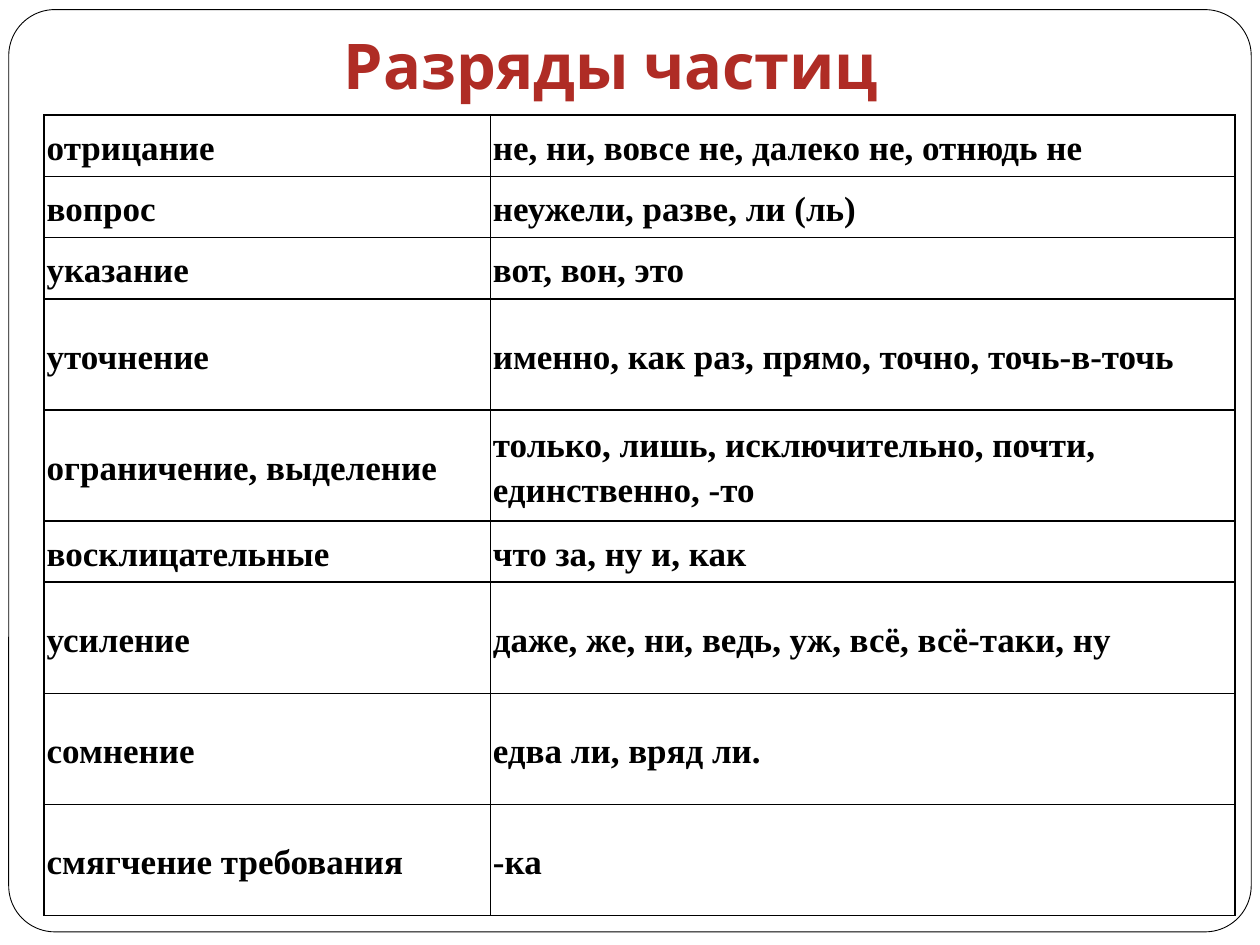
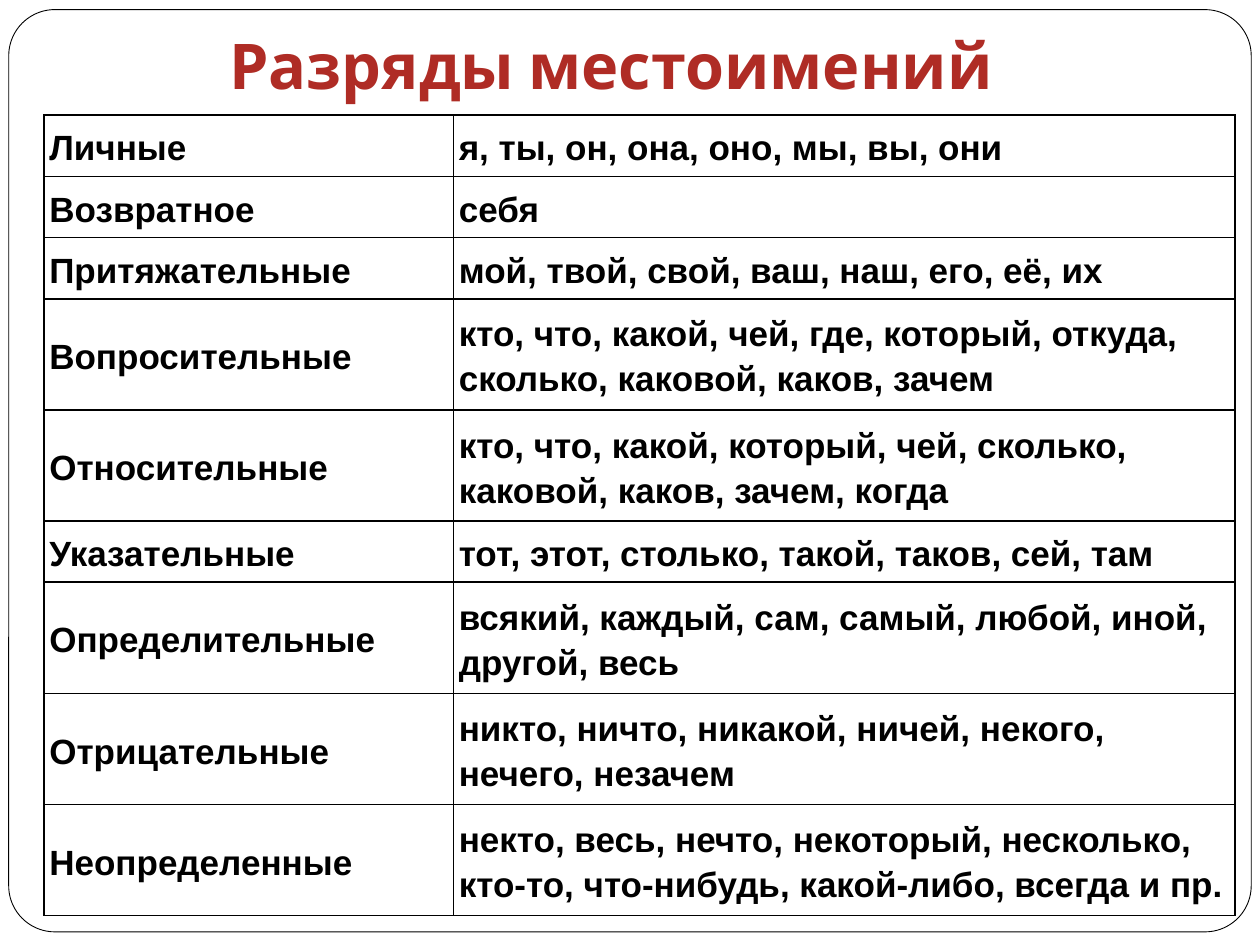
from dataclasses import dataclass

import pptx
import pptx.dml.color
import pptx.enum.shapes
import pptx.enum.text
import pptx.oxml
import pptx.oxml.ns
import pptx.slide
import pptx.table
import pptx.text.text
import pptx.util

Pt = pptx.util.Pt
RGBColor = pptx.dml.color.RGBColor
PP_ALIGN = pptx.enum.text.PP_ALIGN
MSO_ANCHOR = pptx.enum.text.MSO_ANCHOR

BLACK = RGBColor(0x00, 0x00, 0x00)
WHITE = RGBColor(0xFF, 0xFF, 0xFF)
TITLE_RED = RGBColor(0xAF, 0x2C, 0x25)

SHORT_ROW = Pt(35)
TALL_ROW = Pt(63.5)
ROW_HEIGHTS = [SHORT_ROW] * 3 + [TALL_ROW] * 2 + [SHORT_ROW] + [TALL_ROW] * 3
TABLE_LEFT, TABLE_TOP, TABLE_WIDTH = Pt(25.2), Pt(65.8), Pt(680.6)


@dataclass(frozen=True)
class WordClassTable:
    """One slide: its title, the table's look, and (category, examples) rows."""
    title: str
    font: str
    category_width: pptx.util.Length
    inset: pptx.util.Length
    indent: pptx.util.Length
    rows: list[tuple[str, str]]


PARTICLES = WordClassTable(
    "Разряды частиц", "Times New Roman", Pt(255), Pt(0.75), Pt(0.75),
    [
        ("отрицание", "не, ни, вовсе не, далеко не, отнюдь не"),
        ("вопрос", "неужели, разве, ли (ль)"),
        ("указание", "вот, вон, это"),
        ("уточнение", "именно, как раз, прямо, точно, точь-в-точь"),
        ("ограничение, выделение",
         "только, лишь, исключительно, почти, единственно, -то"),
        ("восклицательные", "что за, ну и, как"),
        ("усиление", "даже, же, ни, ведь, уж, всё, всё-таки, ну"),
        ("сомнение", "едва ли, вряд ли."),
        ("смягчение требования", "-ка"),
    ],
)

PRONOUNS = WordClassTable(
    "Разряды местоимений", "Arial", Pt(234), Pt(3), Pt(0),
    [
        ("Личные", "я, ты, он, она, оно, мы, вы, они"),
        ("Возвратное", "себя"),
        ("Притяжательные", "мой, твой, свой, ваш, наш, его, её, их"),
        ("Вопросительные",
         "кто, что, какой, чей, где, который, откуда, сколько, каковой, каков, зачем"),
        ("Относительные",
         "кто, что, какой, который, чей, сколько, каковой, каков, зачем, когда"),
        ("Указательные", "тот, этот, столько, такой, таков, сей, там"),
        ("Определительные",
         "всякий, каждый, сам, самый, любой, иной, другой, весь"),
        ("Отрицательные",
         "никто, ничто, никакой, ничей, некого, нечего, незачем"),
        ("Неопределенные",
         "некто, весь, нечто, некоторый, несколько, кто-то, что-нибудь, "
         "какой-либо, всегда и пр."),
    ],
)


def write_text(tf: pptx.text.text.TextFrame, text: str, *, font: str, size: float,
               color: RGBColor, align: PP_ALIGN = PP_ALIGN.LEFT,
               line_spacing: float = 1.0, indent: int = 0) -> None:
    tf.word_wrap = True
    p = tf.paragraphs[0]
    p.alignment = align
    p.line_spacing = line_spacing
    if indent:
        p._p.get_or_add_pPr().set("marL", str(indent))
    r = p.add_run()
    r.text = text
    r.font.name = font
    r.font.size = Pt(size)
    r.font.bold = True
    r.font.color.rgb = color


def add_frame(slide: pptx.slide.Slide) -> None:
    sp = slide.shapes.add_shape(
        pptx.enum.shapes.MSO_SHAPE.ROUNDED_RECTANGLE,
        Pt(5), Pt(5.5), Pt(710), Pt(527))
    sp.adjustments[0] = 0.05
    sp.shadow.inherit = False
    sp.fill.solid()
    sp.fill.fore_color.rgb = WHITE
    sp.line.color.rgb = BLACK
    sp.line.width = Pt(0.5)


def add_title(slide: pptx.slide.Slide, title: str) -> None:
    tf = slide.shapes.add_textbox(Pt(14.4), Pt(21.6), Pt(669.6), Pt(44)).text_frame
    tf.vertical_anchor = MSO_ANCHOR.BOTTOM
    tf.margin_top, tf.margin_bottom = Pt(3.6), Pt(7.2)
    write_text(tf, title, font="Cabin", size=36, color=TITLE_RED,
               align=PP_ALIGN.CENTER)


def add_borders(cell: pptx.table._Cell) -> None:
    """Draw all four sides; must run before the cell's fill is set."""
    tcPr = cell._tc.get_or_add_tcPr()
    for side in "LRTB":
        tcPr.append(pptx.oxml.parse_xml(
            f'<a:ln{side} {pptx.oxml.ns.nsdecls("a")} w="{Pt(1)}">'
            f'<a:solidFill><a:srgbClr val="{BLACK}"/></a:solidFill></a:ln{side}>'))


def add_word_table(slide: pptx.slide.Slide, spec: WordClassTable) -> None:
    table = slide.shapes.add_table(
        len(spec.rows), 2, TABLE_LEFT, TABLE_TOP, TABLE_WIDTH, sum(ROW_HEIGHTS)).table
    table.first_row = table.horz_banding = False
    table.columns[0].width = spec.category_width
    table.columns[1].width = TABLE_WIDTH - spec.category_width
    for i, (texts, height) in enumerate(zip(spec.rows, ROW_HEIGHTS)):
        table.rows[i].height = height
        for cell, text in zip(table.rows[i].cells, texts):
            add_borders(cell)
            cell.fill.background()
            cell.vertical_anchor = MSO_ANCHOR.MIDDLE
            cell.margin_left = cell.margin_right = spec.inset
            cell.margin_top = cell.margin_bottom = spec.inset
            write_text(cell.text_frame, text, font=spec.font, size=20, color=BLACK,
                       line_spacing=1.15, indent=spec.indent)


def main() -> None:
    prs = pptx.Presentation()
    prs.slide_width, prs.slide_height = Pt(720), Pt(540)
    for spec in (PARTICLES, PRONOUNS):
        slide = prs.slides.add_slide(prs.slide_layouts[6])
        add_frame(slide)
        add_title(slide, spec.title)
        add_word_table(slide, spec)
    prs.save("out.pptx")


if __name__ == "__main__":
    main()
